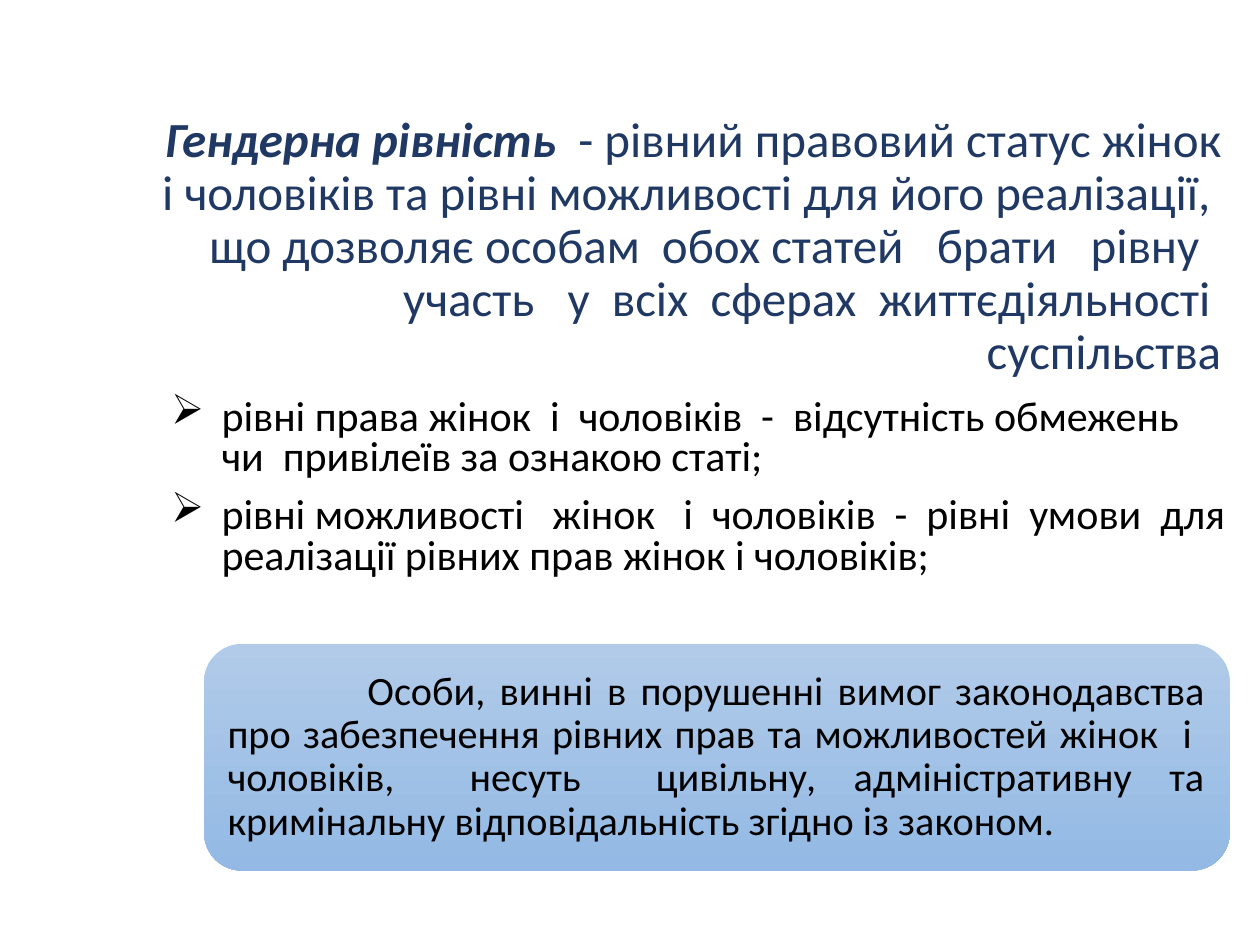
from dataclasses import dataclass

from lxml.etree import SubElement
from pptx import Presentation
from pptx.dml.color import RGBColor
from pptx.enum.shapes import MSO_SHAPE
from pptx.enum.text import MSO_ANCHOR, PP_ALIGN
from pptx.oxml.ns import qn
from pptx.util import Inches, Pt


@dataclass(frozen=True)
class Theme:
    font: str = "Calibri"
    title_size: int = 28
    body_size: int = 24
    callout_size: int = 23
    title_color: str = "203864"
    text_color: str = "000000"
    callout_top: str = "B1CBE9"
    callout_bottom: str = "93B9E4"


THEME = Theme()

TERM = "Гендерна рівність  "
DEFINITION = (
    "- рівний правовий статус жінок і чоловіків та рівні можливості для його "
    "реалізації,  що дозволяє особам  обох статей   брати   рівну   участь   у  "
    "всіх  сферах  життєдіяльності \vсуспільства"
)
PRINCIPLES = [
    "рівні права жінок  і  чоловіків  -  відсутність обмежень  чи  привілеїв "
    "за ознакою статі;",
    "рівні можливості   жінок   і  чоловіків  -  рівні  умови  для реалізації "
    "рівних прав жінок і чоловіків;",
]
LIABILITY = (
    "Особи, винні в порушенні вимог законодавства про забезпечення рівних прав "
    "та можливостей жінок  і  чоловіків,  несуть  цивільну, адміністративну та "
    "кримінальну відповідальність згідно із законом."
)


def add_run(paragraph, text, *, size, color, bold=False, italic=False):
    """Add formatted text; a vertical tab in it becomes a line break."""
    for index, line in enumerate(text.split("\v")):
        if index:
            paragraph.add_line_break()
        run = paragraph.add_run()
        run.text = line
        run.font.name = THEME.font
        run.font.size = Pt(size)
        run.font.bold = bold
        run.font.italic = italic
        run.font.color.rgb = RGBColor.from_string(color)


def set_indent(paragraph, left, first_line, bullet=None):
    properties = paragraph._p.get_or_add_pPr()
    properties.set("marL", str(Inches(left)))
    properties.set("indent", str(Inches(first_line)))
    if bullet:
        SubElement(properties, qn("a:buChar")).set("char", bullet)


def add_text_box(slide, left, top, width, height, anchor=MSO_ANCHOR.TOP):
    box = slide.shapes.add_textbox(
        Inches(left), Inches(top), Inches(width), Inches(height)
    )
    box.text_frame.word_wrap = True
    box.text_frame.vertical_anchor = anchor
    return box.text_frame


def add_definition(slide):
    frame = add_text_box(slide, 1.17, 1.53, 8.62, 0.87, MSO_ANCHOR.MIDDLE)
    paragraph = frame.paragraphs[0]
    paragraph.alignment = PP_ALIGN.RIGHT
    paragraph.line_spacing = 0.9
    style = {"size": THEME.title_size, "color": THEME.title_color}
    add_run(paragraph, TERM, bold=True, italic=True, **style)
    add_run(paragraph, DEFINITION, **style)


def add_principles(slide):
    frame = add_text_box(slide, 1.26, 3.12, 8.62, 1.67)
    for index, text in enumerate(PRINCIPLES):
        paragraph = frame.add_paragraph() if index else frame.paragraphs[0]
        set_indent(paragraph, 0.4, -0.4, bullet="➢")
        paragraph.line_spacing = 0.8
        paragraph.space_before = Pt(10 if index else 0)
        add_run(paragraph, text, size=THEME.body_size, color=THEME.text_color)


def add_callout(slide):
    shape = slide.shapes.add_shape(
        MSO_SHAPE.ROUNDED_RECTANGLE,
        Inches(1.62), Inches(5.11), Inches(8.14), Inches(1.8),
    )
    shape.shadow.inherit = False
    shape.line.fill.background()
    shape.fill.gradient()
    shape.fill.gradient_angle = 270
    colors = (THEME.callout_top, THEME.callout_bottom)
    for position, (stop, color) in enumerate(zip(shape.fill.gradient_stops, colors)):
        stop.position = position
        stop.color.rgb = RGBColor.from_string(color)

    frame = shape.text_frame
    frame.word_wrap = True
    frame.vertical_anchor = MSO_ANCHOR.MIDDLE
    frame.margin_left = frame.margin_right = Inches(0.1)
    frame.margin_top = frame.margin_bottom = Inches(0.1)
    paragraph = frame.paragraphs[0]
    set_indent(paragraph, 0, 1.11)
    paragraph.alignment = PP_ALIGN.JUSTIFY
    paragraph.line_spacing = 0.9
    add_run(paragraph, LIABILITY, size=THEME.callout_size, color=THEME.text_color)


def main():
    presentation = Presentation()
    presentation.slide_width = Inches(10)
    presentation.slide_height = Inches(7.5)
    slide = presentation.slides.add_slide(presentation.slide_layouts[6])
    add_definition(slide)
    add_principles(slide)
    add_callout(slide)
    presentation.save("out.pptx")


if __name__ == "__main__":
    main()
